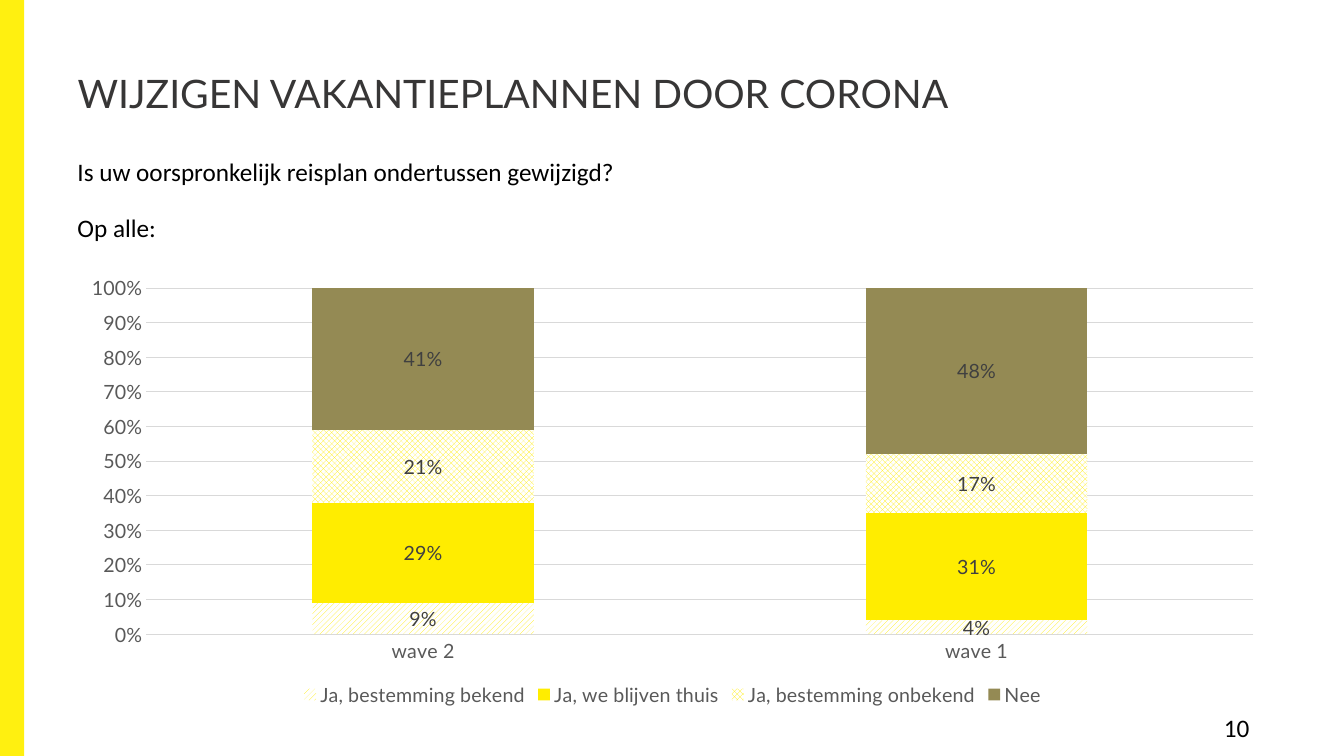
from pptx import Presentation
from pptx.chart.data import CategoryChartData
from pptx.dml.color import RGBColor
from pptx.enum.chart import XL_CHART_TYPE as ChartType, XL_LABEL_POSITION as LabelPosition
from pptx.enum.chart import XL_LEGEND_POSITION as LegendPosition, XL_TICK_MARK as TickMark
from pptx.enum.dml import MSO_PATTERN as Pattern
from pptx.enum.shapes import MSO_SHAPE as Shape
from pptx.enum.text import MSO_ANCHOR as Anchor, PP_ALIGN as Align
from pptx.util import Inches, Pt

WIDTH, HEIGHT = 13.33, 7.5
MARGIN, CONTENT_WIDTH = 0.67, 12
YELLOW, OLIVE, WHITE, BLACK = "FFED00", "948A54", "FFFFFF", "000000"
GREY, PALE_GREY, DARK_GREY = "595959", "D9D9D9", "404040"


def color(code):
    return RGBColor.from_string(code)


def style(font, size, name, code):
    """Set size, typeface and colour of a font."""
    for key, value in {"size": Pt(size), "name": name, "bold": False}.items():
        setattr(font, key, value)
    font.color.rgb = color(code)


deck = Presentation()
deck.slide_width, deck.slide_height = Inches(WIDTH), Inches(HEIGHT)
page = deck.slides.add_slide(deck.slide_layouts[5])

# Yellow band along the left edge
band = page.shapes.add_shape(Shape.RECTANGLE, 0, 0, Inches(0.24), Inches(HEIGHT))
band.shadow.inherit = False
band.fill.solid()
band.fill.fore_color.rgb = color("FFF010")
band.line.fill.background()

# Title
title = page.shapes.title
title.left, title.top = Inches(MARGIN), Inches(0.3)
title.width, title.height = Inches(CONTENT_WIDTH), Inches(1.25)
title.text_frame.text = "WIJZIGEN VAKANTIEPLANNEN DOOR CORONA"
title.text_frame.vertical_anchor = Anchor.MIDDLE
heading = title.text_frame.paragraphs[0]
heading.alignment = Align.LEFT
style(heading.runs[0].font, 28, "Lato", "373636")

# Question, base and page number
for text, left, top, width, wrap in (
    ("Is uw oorspronkelijk reisplan ondertussen gewijzigd?", MARGIN, 1.5, 5.58, False),
    ("Op alle:", MARGIN, 2.06, 0.99, False),
    ("10", 12.04, 7.02, 0.63, True),
):
    box = page.shapes.add_textbox(Inches(left), Inches(top), Inches(width), Inches(0.4))
    box.text_frame.word_wrap = wrap
    box.text_frame.text = text
    style(box.text_frame.paragraphs[0].runs[0].font, 18, "Calibri", BLACK)

# Stacked chart: name, values, colour, pattern
answers = (
    ("Ja, bestemming bekend", (0.09, 0.04), YELLOW, Pattern.WIDE_UPWARD_DIAGONAL),
    ("Ja, we blijven thuis", (0.29, 0.31), YELLOW, None),
    ("Ja, bestemming onbekend", (0.21, 0.17), YELLOW, Pattern.LARGE_CHECKER_BOARD),
    ("Nee", (0.41, 0.48), OLIVE, None),
)
data = CategoryChartData(number_format="0%")
data.categories = ["wave 2", "wave 1"]
for name, values, _, _ in answers:
    data.add_series(name, values)
chart = page.shapes.add_chart(
    ChartType.COLUMN_STACKED_100, Inches(MARGIN), Inches(2.65),
    Inches(CONTENT_WIDTH), Inches(4.4), data,
).chart
chart.has_title = False
style(chart.font, 14, "Lato", BLACK)

plot = chart.plots[0]
plot.gap_width, plot.overlap, plot.vary_by_categories = 150, 100, False
for series, (_, _, code, pattern) in zip(plot.series, answers):
    fill = series.format.fill
    if pattern is None:
        fill.solid()
    else:
        fill.patterned()
        fill.pattern = pattern
        fill.back_color.rgb = color(WHITE)
    fill.fore_color.rgb = color(code)
    labels = series.data_labels
    for key, value in {
        "show_value": True, "position": LabelPosition.CENTER,
        "number_format": "0%", "number_format_is_linked": False,
    }.items():
        setattr(labels, key, value)
    style(labels.font, 14, "Lato", DARK_GREY)

# Axes and legend
waves, shares = chart.category_axis, chart.value_axis
for axis in (waves, shares):
    axis.major_tick_mark = axis.minor_tick_mark = TickMark.NONE
    style(axis.tick_labels.font, 14, "Lato", GREY)
shares.minimum_scale, shares.maximum_scale, shares.major_unit = 0, 1, 0.1
shares.tick_labels.number_format = "0%"
shares.tick_labels.number_format_is_linked = False
shares.format.line.fill.background()
for line in (waves.format.line, shares.major_gridlines.format.line):
    line.color.rgb = color(PALE_GREY)
    line.width = Pt(0.75)

chart.has_legend = True
chart.legend.position = LegendPosition.BOTTOM
chart.legend.include_in_layout = False
style(chart.legend.font, 14, "Lato", GREY)

deck.save("out.pptx")
